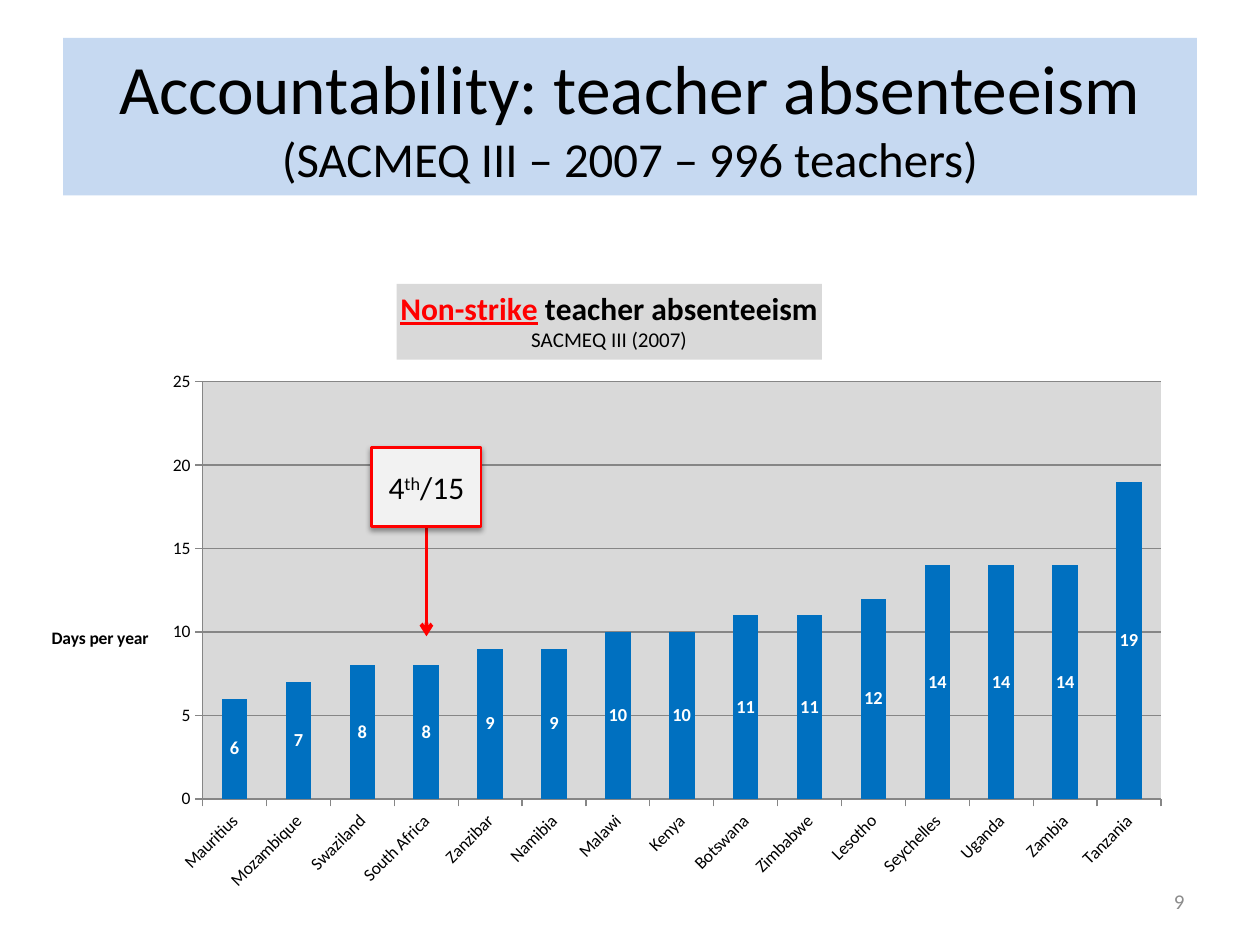
from pptx import Presentation
from pptx.chart.data import CategoryChartData
from pptx.dml.color import RGBColor
from pptx.enum.chart import XL_CHART_TYPE as ChartType
from pptx.enum.chart import XL_LABEL_POSITION as LabelPosition
from pptx.enum.chart import XL_TICK_MARK as TickMark
from pptx.enum.shapes import MSO_CONNECTOR as Connector
from pptx.enum.shapes import MSO_SHAPE as Shape
from pptx.enum.text import MSO_ANCHOR as Anchor
from pptx.enum.text import MSO_AUTO_SIZE as AutoSize
from pptx.enum.text import PP_ALIGN as Align
from pptx.oxml import parse_xml
from pptx.oxml.ns import nsdecls, qn
from pptx.util import Pt

BLACK = RGBColor(0, 0, 0)
WHITE = RGBColor(255, 255, 255)
RED = RGBColor(255, 0, 0)
BAR_BLUE = RGBColor(0x00, 0x70, 0xC0)
TITLE_BLUE = RGBColor(0xC6, 0xD9, 0xF1)
PANEL_GRAY = RGBColor(0xD9, 0xD9, 0xD9)
CALLOUT_GRAY = RGBColor(0xF2, 0xF2, 0xF2)
AXIS_GRAY = RGBColor(0x86, 0x86, 0x86)
NUMBER_GRAY = RGBColor(0x8C, 0x8C, 0x8C)
FONT = "Calibri"

ABSENT_DAYS = {
    "Mauritius": 6, "Mozambique": 7, "Swaziland": 8, "South Africa": 8,
    "Zanzibar": 9, "Namibia": 9, "Malawi": 10, "Kenya": 10,
    "Botswana": 11, "Zimbabwe": 11, "Lesotho": 12, "Seychelles": 14,
    "Uganda": 14, "Zambia": 14, "Tanzania": 19,
}


def format_font(font, color=BLACK, **values):
    font.color.rgb = color
    for name, value in {"name": FONT, **values}.items():
        setattr(font, name, value)


def add_span(para, text, **values):
    span = para.add_run()
    span.text = text
    format_font(span.font, **values)
    return span


def place(shape, left, top, width, height):
    values = {"left": left, "top": top, "width": width, "height": height}
    for name, value in values.items():
        setattr(shape, name, Pt(value))


def fill_solid(fill, color):
    fill.solid()
    fill.fore_color.rgb = color


def format_line(line, color, width):
    line.color.rgb = color
    line.width = Pt(width)


def add_title(slide):
    title = slide.shapes.title
    place(title, 36, 21.6, 648, 90)
    fill_solid(title.fill, TITLE_BLUE)
    frame = title.text_frame
    frame.auto_size = AutoSize.NONE
    frame.vertical_anchor = Anchor.MIDDLE
    para = frame.paragraphs[0]
    para.alignment = Align.CENTER
    add_span(para, "Accountability: teacher absenteeism", size=Pt(39.6))
    para.add_line_break()
    add_span(para, "(SACMEQ III – 2007 – 996 teachers)", size=Pt(27.9))


def set_layout(element, index, **fractions):
    """Put a manual layout, in fractions of the chart, at a child index."""
    for old in element.findall(qn("c:layout")):
        element.remove(old)
    inner = '<c:layoutTarget val="inner"/>' if "w" in fractions else ""
    modes = '<c:xMode val="edge"/><c:yMode val="edge"/>'
    sizes = "".join(f'<c:{key} val="{value}"/>' for key, value in fractions.items())
    element.insert(index, parse_xml(
        f'<c:layout {nsdecls("c")}><c:manualLayout>{inner}{modes}{sizes}'
        "</c:manualLayout></c:layout>"))


def format_chart_title(title):
    frame = title.text_frame
    heading = frame.paragraphs[0]
    add_span(heading, "Non-strike", color=RED, size=Pt(18), bold=True, underline=True)
    add_span(heading, " teacher absenteeism", size=Pt(18), bold=True, underline=False)
    add_span(frame.add_paragraph(), "SACMEQ III (2007)", size=Pt(12), bold=False)
    fill_solid(title.format.fill, PANEL_GRAY)
    set_layout(title.element, 1, x=0.32, y=0.03)


def format_axes(chart):
    days, countries = chart.value_axis, chart.category_axis
    for axis in (days, countries):
        axis.major_tick_mark = TickMark.OUTSIDE
        axis.minor_tick_mark = TickMark.NONE
        format_line(axis.format.line, AXIS_GRAY, 0.75)
        format_font(axis.tick_labels.font, size=Pt(10))
    scale = {"minimum_scale": 0, "maximum_scale": 25, "major_unit": 5,
             "has_major_gridlines": True, "has_title": True}
    for name, value in scale.items():
        setattr(days, name, value)
    format_line(days.major_gridlines.format.line, AXIS_GRAY, 0.75)
    days.tick_labels.number_format = "0"
    days.tick_labels.number_format_is_linked = False

    title = days.axis_title
    add_span(title.text_frame.paragraphs[0], "Days per year", size=Pt(10), bold=True)
    title.element.find(".//" + qn("a:bodyPr")).set("rot", "0")
    set_layout(title.element, 1, x=0.02, y=0.56)
    label_body = chart.element.find(
        f'.//{qn("c:catAx")}/{qn("c:txPr")}/{qn("a:bodyPr")}')
    label_body.set("rot", "-2700000")


def format_bars(plot):
    plot.gap_width = 150
    plot.overlap = 100
    plot.vary_by_categories = False
    fill_solid(plot.series[0].format.fill, BAR_BLUE)
    labels = plot.series[0].data_labels
    values = {"show_value": True, "position": LabelPosition.CENTER,
              "number_format": "0", "number_format_is_linked": False}
    for name, value in values.items():
        setattr(labels, name, value)
    format_font(labels.font, color=WHITE, size=Pt(10.5), bold=True)


def add_absence_chart(slide):
    data = CategoryChartData(number_format="0")
    data.categories = list(ABSENT_DAYS)
    data.add_series("Series 1", list(ABSENT_DAYS.values()))
    chart = slide.shapes.add_chart(
        ChartType.COLUMN_STACKED, Pt(14.4), Pt(151.2), Pt(663), Pt(365.8), data).chart
    format_font(chart.font, size=Pt(10))
    chart.has_legend = False
    chart.has_title = True
    format_chart_title(chart.chart_title)
    format_axes(chart)
    format_bars(chart.plots[0])
    plot_area = chart.element.find(".//" + qn("c:plotArea"))
    set_layout(plot_area, 0, x=0.153, y=0.183, w=0.826, h=0.652)
    plot_area.append(parse_xml(
        f'<c:spPr {nsdecls("c", "a")}><a:solidFill><a:srgbClr val="{PANEL_GRAY}"/>'
        "</a:solidFill></c:spPr>"))


def add_rank_box(slide):
    box = slide.shapes.add_shape(Shape.RECTANGLE, 0, 0, 0, 0)
    place(box, 212.4, 255.6, 62.6, 45.4)
    fill_solid(box.fill, CALLOUT_GRAY)
    format_line(box.line, RED, 1.5)
    box.element.spPr.append(parse_xml(
        f'<a:effectLst {nsdecls("a")}><a:outerShdw blurRad="{Pt(3.1)}" '
        f'dist="{Pt(1.6)}" dir="5400000" rotWithShape="0"><a:srgbClr val="000000">'
        '<a:alpha val="38000"/></a:srgbClr></a:outerShdw></a:effectLst>'))
    box.text_frame.vertical_anchor = Anchor.MIDDLE
    para = box.text_frame.paragraphs[0]
    para.alignment = Align.CENTER
    add_span(para, "4", size=Pt(18))
    ordinal = add_span(para, "th", size=Pt(18))
    ordinal.font._element.set("baseline", "30000")
    add_span(para, "/15", size=Pt(18))
    return box


def add_arrow_below(slide, box, end_y):
    middle = box.left + box.width // 2
    arrow = slide.shapes.add_connector(
        Connector.STRAIGHT, middle, box.top + box.height, middle, Pt(end_y))
    arrow.begin_connect(box, 2)
    format_line(arrow.line, RED, 2.25)
    arrow.line._get_or_add_ln().append(
        parse_xml(f'<a:tailEnd {nsdecls("a")} type="arrow"/>'))
    arrow.element.spPr.append(parse_xml(f'<a:effectLst {nsdecls("a")}/>'))
    box.element.addprevious(arrow.element)


def add_page_number(slide, number):
    box = slide.shapes.add_textbox(Pt(516), Pt(500.4), Pt(168), Pt(28.8))
    box.text_frame.word_wrap = True
    box.text_frame.vertical_anchor = Anchor.MIDDLE
    para = box.text_frame.paragraphs[0]
    para.alignment = Align.RIGHT
    add_span(para, number, color=NUMBER_GRAY, size=Pt(12))


def main():
    deck = Presentation()
    deck.slide_width, deck.slide_height = Pt(720), Pt(540)
    slide = deck.slides.add_slide(deck.slide_layouts.get_by_name("Title Only"))
    add_title(slide)
    add_absence_chart(slide)
    rank_box = add_rank_box(slide)
    add_arrow_below(slide, rank_box, 363.6)
    add_page_number(slide, "9")
    deck.save("out.pptx")


if __name__ == "__main__":
    main()
